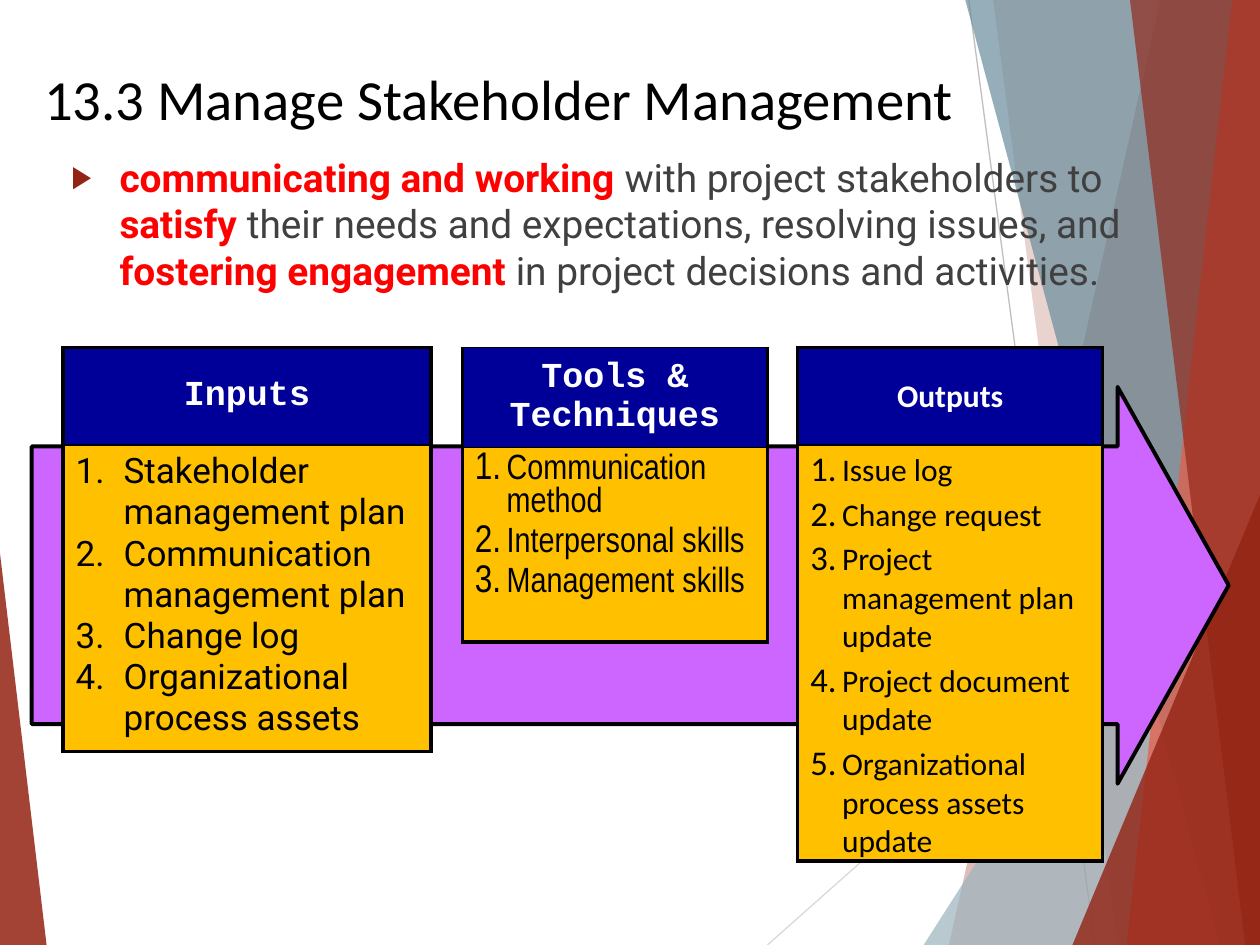
from lxml.etree import SubElement
from pptx import Presentation
from pptx.dml.color import RGBColor
from pptx.enum.shapes import MSO_CONNECTOR, MSO_SHAPE
from pptx.enum.text import MSO_ANCHOR, PP_ALIGN
from pptx.oxml.ns import qn
from pptx.util import Cm, Pt

BLACK = RGBColor(0x00, 0x00, 0x00)
WHITE = RGBColor(0xFF, 0xFF, 0xFF)
GREY = RGBColor(0x40, 0x40, 0x40)
RED = RGBColor(0xFF, 0x00, 0x00)
MAROON = RGBColor(0x93, 0x23, 0x13)
CORAL = RGBColor(0xE7, 0x5C, 0x48)
STEEL = RGBColor(0x69, 0x8D, 0x9C)
PALE_STEEL = RGBColor(0x9E, 0xB5, 0xBF)
PURPLE = RGBColor(0xCC, 0x66, 0xFF)
NAVY = RGBColor(0x00, 0x00, 0x99)
AMBER = RGBColor(0xFF, 0xC0, 0x00)

WIDTH, HEIGHT = 25.4, 19.05

# Lengths are in centimetres, text sizes and line widths in points.
HAIRLINES = [
    ((19.53, 0), (22.07, HEIGHT), RGBColor(0xBF, 0xBF, 0xBF)),
    ((WIDTH, 10.24), (15.47, HEIGHT), RGBColor(0xD9, 0xD9, 0xD9)),
]
# A band runs to the right edge: (top x, bottom x).
# A triangle: (left, top, width, height, apex position).
FACETS = [
    ("band", (23.39, 19.13), MAROON, 30),
    ("band", (20.02, 22.53), MAROON, 20),
    ("triangle", (18.62, 8.46, 6.78, 10.59, 1), PALE_STEEL, 72),
    ("band", (19.46, 24.59), STEEL, 70),
    ("band", (24.84, 22.71), CORAL, 70),
    ("band", (22.78, 25.1), MAROON, 65),
    ("triangle", (21.62, 9.98, 3.78, 9.07, 1), MAROON, 80),
    ("triangle", (0, 11.15, 0.94, 7.9, 0), MAROON, 85),
]

TITLE = "13.3 Manage Stakeholder Management"
DEFINITION = [
    ("communicating and working ", True),
    ("with project stakeholders to ", False),
    ("satisfy ", True),
    ("their needs and expectations, resolving issues, and ", False),
    ("fostering engagement ", True),
    ("in project decisions and activities.", False),
]

PROCESS_TOP = 7.01
PROCESS = [
    dict(heading="Inputs", heading_font="Courier New", item_font="Roboto", size=20,
         left=1.27, width=7.42, rows=(1.96, 3.86), top_line=2.25,
         indent=0.97, gap=0, number_scale=100, number_font="Roboto",
         items=["Stakeholder management plan", "Communication management plan",
                "Change log", "Organizational process assets"]),
    dict(heading="Tools & Techniques", heading_font="Courier New",
         item_font="Arial Narrow", size=20,
         left=9.32, width=6.15, rows=(2.01, 3.05), top_line=1,
         indent=0.64, gap=0.2, number_scale=110, number_font="Calibri",
         items=["Communication method", "Interpersonal skills", "Management skills"]),
    dict(heading="Outputs", heading_font="Calibri", item_font="Calibri", size=18,
         left=16.08, width=6.15, rows=(1.96, 5.08), top_line=2.25,
         indent=0.64, gap=0.2, number_scale=110, number_font="Calibri",
         items=["Issue log", "Change request", "Project management plan update",
                "Project document update", "Organizational process assets update"]),
]


def add_run(paragraph, text, font, size, color, bold=False):
    run = paragraph.add_run()
    run.text = text
    run.font.name = font
    run.font.size = Pt(size)
    run.font.bold = bold
    run.font.color.rgb = color


def set_bullet(paragraph, indent, scale, font, kind, color=None, **marker):
    """Hang the paragraph behind a bullet character or an automatic number."""
    props = paragraph._p.get_or_add_pPr()
    props.set("marL", str(Cm(indent)))
    props.set("indent", str(-Cm(indent)))
    if color is not None:
        SubElement(SubElement(props, qn("a:buClr")), qn("a:srgbClr"), val=str(color))
    SubElement(props, qn("a:buSzPct"), val=str(scale * 1000))
    SubElement(props, qn("a:buFont"), typeface=font)
    SubElement(props, qn(kind), **marker)


def add_textbox(shapes, left, top, width, height):
    frame = shapes.add_textbox(Cm(left), Cm(top), Cm(width), Cm(height)).text_frame
    frame.word_wrap = True
    return frame


def add_hairline(shapes, start, end, color):
    line = shapes.add_connector(MSO_CONNECTOR.STRAIGHT, *map(Cm, start + end))
    line.line.color.rgb = color
    line.line.width = Pt(0.75)
    SubElement(line._element.spPr, qn("a:effectLst"))


def add_facet(shapes, kind, geometry, color, opacity):
    if kind == "band":
        top_x, bottom_x = geometry
        outline = shapes.build_freeform(Cm(top_x), 0)
        corners = [(WIDTH, 0), (WIDTH, HEIGHT), (bottom_x, HEIGHT)]
        outline.add_line_segments([(Cm(x), Cm(y)) for x, y in corners])
        facet = outline.convert_to_shape()
    else:
        *box, apex = geometry
        facet = shapes.add_shape(MSO_SHAPE.ISOSCELES_TRIANGLE, *map(Cm, box))
        facet.adjustments[0] = apex
    facet.shadow.inherit = False
    facet.fill.solid()
    facet.fill.fore_color.rgb = color
    facet.line.fill.background()
    tint = facet._element.spPr.find(qn("a:solidFill"))[0]
    SubElement(tint, qn("a:alpha"), val=str(opacity * 1000))


def style_cell(cell, color, top, bottom):
    props = cell._tc.get_or_add_tcPr()
    for side, width in (("L", 2.25), ("R", 2.25), ("T", top), ("B", bottom)):
        border = SubElement(props, qn(f"a:ln{side}"), w=str(Pt(width)))
        SubElement(SubElement(border, qn("a:solidFill")), qn("a:srgbClr"), val=str(BLACK))
    cell.fill.solid()
    cell.fill.fore_color.rgb = color


def add_process_table(shapes, part):
    table = shapes.add_table(2, 1, Cm(part["left"]), Cm(PROCESS_TOP),
                             Cm(part["width"]), Cm(sum(part["rows"]))).table
    for row, height in zip(table.rows, part["rows"]):
        row.height = Cm(height)
    heading, body = table.cell(0, 0), table.cell(1, 0)

    style_cell(heading, NAVY, part["top_line"], 1)
    heading.vertical_anchor = MSO_ANCHOR.MIDDLE
    paragraph = heading.text_frame.paragraphs[0]
    paragraph.alignment = PP_ALIGN.CENTER
    add_run(paragraph, part["heading"], part["heading_font"], part["size"], WHITE, True)

    style_cell(body, AMBER, 1, 2.25)
    frame = body.text_frame
    for index, item in enumerate(part["items"]):
        paragraph = frame.add_paragraph() if index else frame.paragraphs[0]
        paragraph.space_before = Pt(part["gap"] * part["size"])
        set_bullet(paragraph, part["indent"], part["number_scale"],
                   part["number_font"], "a:buAutoNum", type="arabicPeriod")
        add_run(paragraph, item, part["item_font"], part["size"], BLACK)


def main():
    deck = Presentation()
    deck.slide_width, deck.slide_height = Cm(WIDTH), Cm(HEIGHT)
    shapes = deck.slides.add_slide(deck.slide_layouts[6]).shapes

    for hairline in HAIRLINES:
        add_hairline(shapes, *hairline)
    for facet in FACETS:
        add_facet(shapes, *facet)

    arrow = shapes.add_shape(MSO_SHAPE.RIGHT_ARROW, Cm(0.64), Cm(7.8), Cm(24.13), Cm(8))
    arrow.adjustments[0], arrow.adjustments[1] = 0.7, 0.28
    arrow.shadow.inherit = False
    arrow.fill.solid()
    arrow.fill.fore_color.rgb = PURPLE
    arrow.line.color.rgb = BLACK
    arrow.line.width = Pt(2.25)

    title = add_textbox(shapes, 0.64, 1.09, 21.16, 1.07)
    title.margin_top = Cm(0.2)
    add_run(title.paragraphs[0], TITLE, "Calibri", 32.4, BLACK)

    definition = add_textbox(shapes, 1.19, 2.97, 21.79, 3.81).paragraphs[0]
    set_bullet(definition, 0.97, 80, "Arial", "a:buChar", MAROON, char="▶")
    for text, stressed in DEFINITION:
        add_run(definition, text, "Roboto", 22.2, RED if stressed else GREY, stressed)

    for part in PROCESS:
        add_process_table(shapes, part)

    deck.save("out.pptx")


if __name__ == "__main__":
    main()
